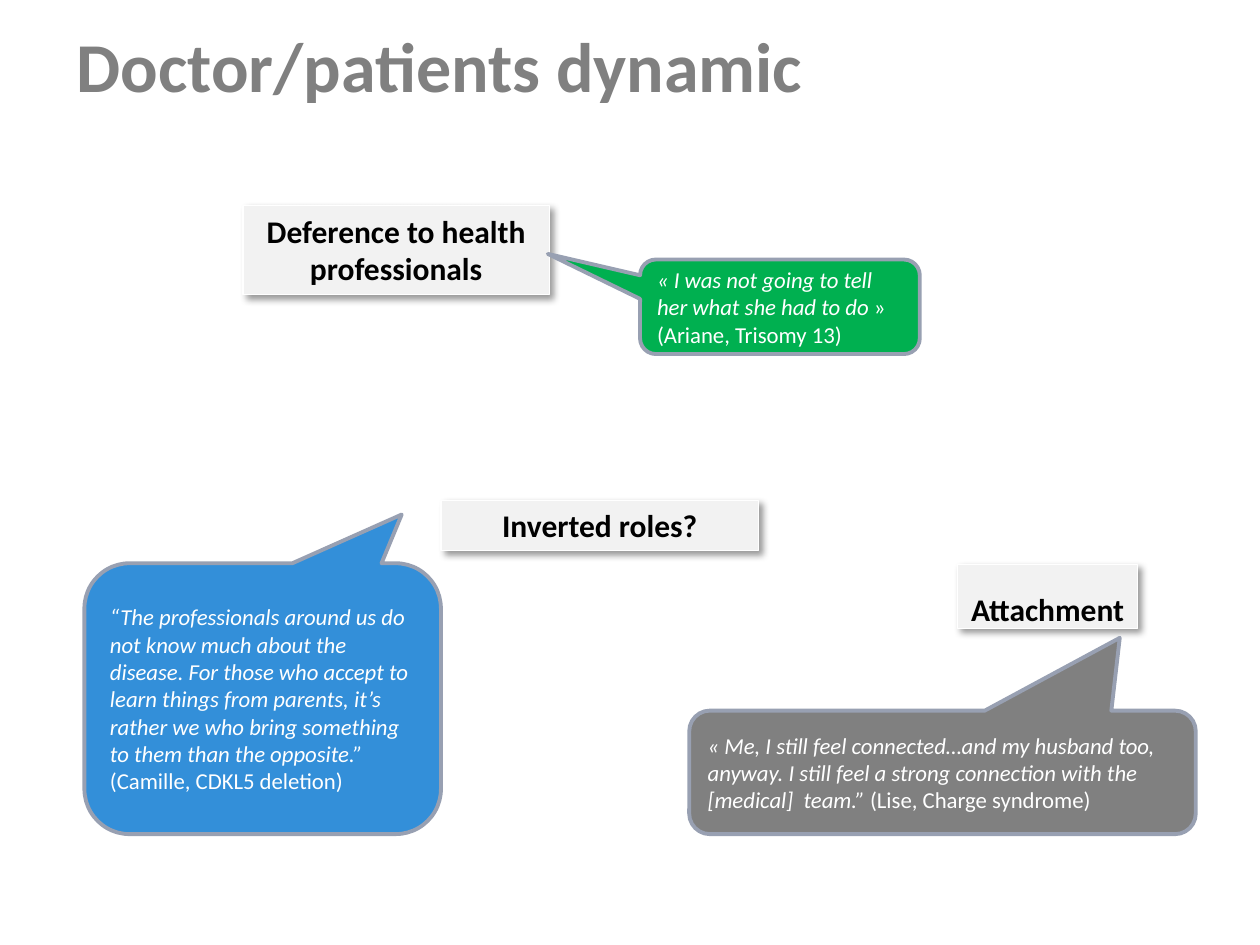
from lxml.etree import SubElement
from pptx import Presentation
from pptx.dml.color import RGBColor
from pptx.enum.shapes import MSO_SHAPE
from pptx.enum.text import MSO_ANCHOR, MSO_AUTO_SIZE, PP_ALIGN
from pptx.oxml.ns import qn
from pptx.util import Inches, Pt

COLUMNS, ROWS = 100, 75
WIDTH, HEIGHT = Inches(10), Inches(7.5)


def hex_color(value):
    return RGBColor.from_string(value)


def grid_box(left, top, width, height):
    """Turn columns and rows of the slide grid into lengths."""
    column, row = WIDTH / COLUMNS, HEIGHT / ROWS
    return [int(n) for n in (left * column, top * row, width * column, height * row)]


def write(box, runs, size, color, bold=False, align=PP_ALIGN.LEFT,
          anchor=MSO_ANCHOR.TOP, wrap=True, spacing=None):
    """Fill a box with one paragraph of (text, italic) runs."""
    frame = box.text_frame
    frame.word_wrap = wrap
    frame.vertical_anchor = anchor
    para = frame.paragraphs[0]
    para.alignment = align
    para.line_spacing = spacing
    for text, italic in runs:
        span = para.add_run()
        span.text = text
        font = span.font
        font.name, font.size = "Calibri", Pt(size)
        font.bold, font.italic = bold, italic
        font.color.rgb = hex_color(color)


def add_panel(page, kind, box, fill, line, line_width):
    panel = page.shapes.add_shape(kind, *grid_box(*box))
    panel.shadow.inherit = False
    panel.fill.solid()
    panel.fill.fore_color.rgb = hex_color(fill)
    panel.line.color.rgb = hex_color(line)
    panel.line.width = Pt(line_width)
    return panel


def cast_shadow(shape):
    """Give the shape a soft grey shadow towards the lower right."""
    effects = shape._element.spPr.find(qn("a:effectLst"))
    shadow = SubElement(effects, qn("a:outerShdw"), blurRad=str(Pt(4)),
                        dist=str(Pt(3)), dir=str(45 * 60000), algn="tl", rotWithShape="0")
    color = SubElement(shadow, qn("a:srgbClr"), val="000000")
    SubElement(color, qn("a:alpha"), val="40000")


def add_title(page, box, text):
    title = page.shapes.title
    title.left, title.top, title.width, title.height = grid_box(*box)
    write(title, [(text, False)], size=40, color="808080", bold=True)
    title.text_frame.auto_size = MSO_AUTO_SIZE.NONE


def add_theme(page, box, text, **text_format):
    label = add_panel(page, MSO_SHAPE.RECTANGLE, box, "F2F2F2", "FFFFFF", 0.75)
    cast_shadow(label)
    write(label, [(text, False)], size=18, color="000000", bold=True,
          align=PP_ALIGN.CENTER, **text_format)
    label.text_frame.auto_size = MSO_AUTO_SIZE.SHAPE_TO_FIT_TEXT


def add_quote(page, box, fill, tip, words, speaker):
    """Draw a speech bubble; tip is the pointer's offset from the centre in shares of the box."""
    bubble = add_panel(page, MSO_SHAPE.ROUNDED_RECTANGULAR_CALLOUT, box, fill, "98A0B2", 2.22)
    bubble.adjustments[0], bubble.adjustments[1] = tip
    write(bubble, [(words, True), (speaker, False)], size=13, color="FFFFFF",
          anchor=MSO_ANCHOR.MIDDLE)


def main():
    deck = Presentation()
    deck.slide_width, deck.slide_height = WIDTH, HEIGHT
    page = deck.slides.add_slide(deck.slide_layouts[5])

    add_title(page, (5.1, 1.3, 94.9, 12.5), "Doctor/patients dynamic")

    add_theme(page, (35, 39.7, 25.2, 4), "Inverted roles?")
    add_theme(page, (76, 44.8, 14.3, 5.1), "Attachment", wrap=False, spacing=1.5)
    add_theme(page, (19.3, 16.3, 24.3, 7.1), "Deference to health professionals")

    add_quote(page, (50.8, 20.6, 22.2, 7.5), "00B050", (-0.83, -0.56),
              "« I was not going to tell her what she had to do ",
              "» (Ariane, Trisomy 13)")
    add_quote(page, (6.7, 44.7, 28.3, 21.5), "338FD9", (0.39, -0.68),
              "“The professionals around us do not know much about the disease. "
              "For those who accept to learn things from parents, it’s rather we "
              "who bring something to them than the opposite.” ",
              "(Camille, CDKL5 deletion)")
    add_quote(page, (54.7, 56.4, 40.2, 9.8), "808080", (0.35, -1.09),
              "« Me, I still feel connected…and my husband too, anyway. "
              "I still feel a strong connection with the [medical]  team.” ",
              "(Lise, Charge syndrome)")

    deck.save("out.pptx")


if __name__ == "__main__":
    main()
